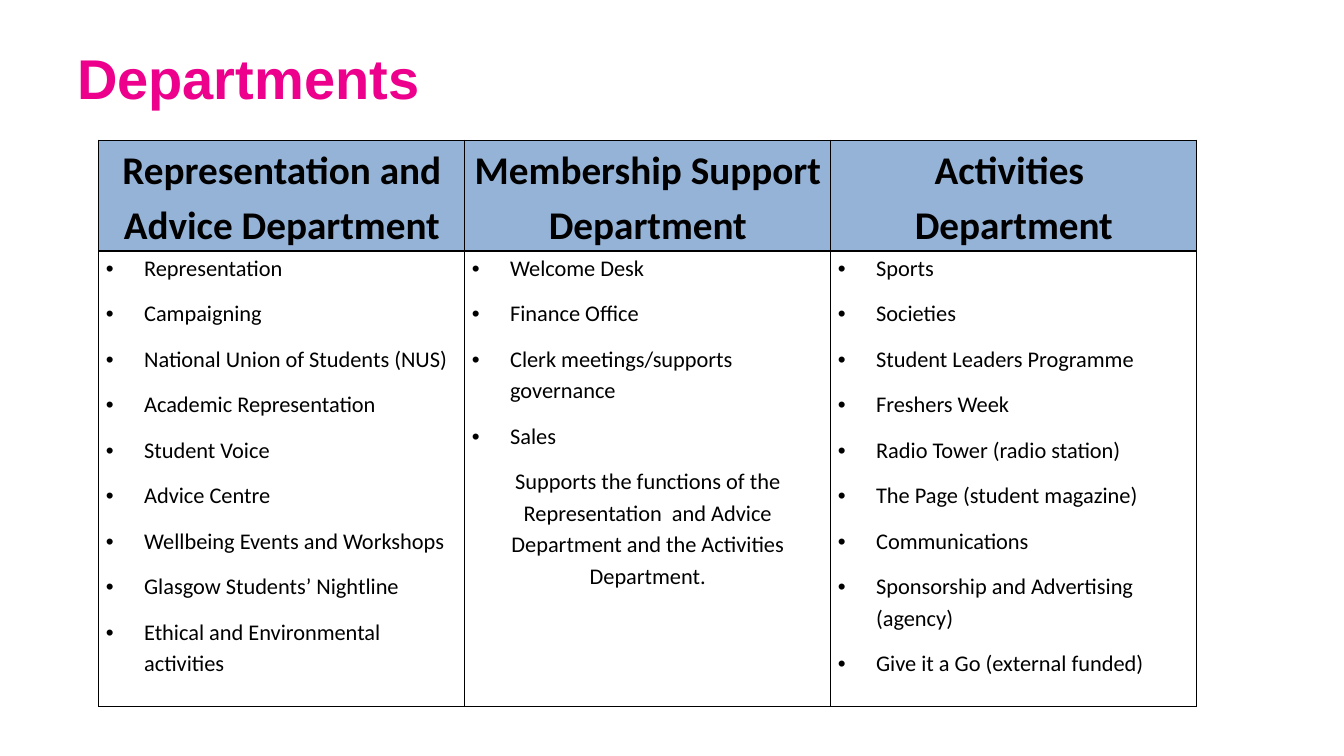
import pptx
import pptx.dml.color
import pptx.enum.text
import pptx.oxml.ns
import pptx.util
from lxml import etree

Inches = pptx.util.Inches
Pt = pptx.util.Pt
RGB = pptx.dml.color.RGBColor
ALIGN = pptx.enum.text.PP_ALIGN
ANCHOR = pptx.enum.text.MSO_ANCHOR

PINK = RGB(0xEC, 0x00, 0x8C)
BLUE = RGB(0x95, 0xB3, 0xD7)
BLACK = RGB(0x00, 0x00, 0x00)

WIDE, HIGH = Inches(13.33), Inches(7.5)
COL = Inches(3.63)
ROWS = (Inches(1.1), Inches(4.52))
INDENT = Inches(0.38)

# Department name, bulleted duties, closing note
DEPTS = (
    ("Representation and Advice Department",
     ("Representation", "Campaigning", "National Union of Students (NUS)",
      "Academic Representation", "Student Voice", "Advice Centre",
      "Wellbeing Events and Workshops", "Glasgow Students’ Nightline",
      "Ethical and Environmental activities"), None),
    ("Membership Support\nDepartment",
     ("Welcome Desk", "Finance Office", "Clerk meetings/supports governance",
      "Sales"),
     "Supports the functions of the Representation  and Advice Department "
     "and the Activities Department."),
    ("Activities \nDepartment",
     ("Sports", "Societies", "Student Leaders Programme", "Freshers Week",
      "Radio Tower (radio station)", "The Page (student magazine)",
      "Communications", "Sponsorship and Advertising (agency)",
      "Give it a Go (external funded)"), None),
)


def write(frame, text, size=16, font="Calibri", color=BLACK, bold=False,
          align=ALIGN.LEFT, bullet=False, line=1.15, after=10):
    """Fill the first empty paragraph, or add one."""
    para = frame.paragraphs[0] if not frame.text else frame.add_paragraph()
    if bullet:
        props = para._p.get_or_add_pPr()
        props.set("marL", str(INDENT))
        props.set("indent", str(-INDENT))
        etree.SubElement(props, pptx.oxml.ns.qn("a:buFont"), typeface="Arial")
        etree.SubElement(props, pptx.oxml.ns.qn("a:buChar"), char="•")
    para.text = text
    para.alignment = align
    para.line_spacing = line
    para.space_after = Pt(after)
    for run in para.runs:
        run.font.size = Pt(size)
        run.font.name = font
        run.font.bold = bold
        run.font.color.rgb = color


def border(cell):
    props = cell._tc.get_or_add_tcPr()
    for side in ("a:lnL", "a:lnR", "a:lnT", "a:lnB"):
        edge = etree.SubElement(props, pptx.oxml.ns.qn(side), w=str(Pt(1)))
        fill = etree.SubElement(edge, pptx.oxml.ns.qn("a:solidFill"))
        etree.SubElement(fill, pptx.oxml.ns.qn("a:srgbClr"), val=str(BLACK))


def style(cell, fill=None):
    cell.margin_left = cell.margin_right = Inches(0.07)
    cell.margin_top = cell.margin_bottom = 0
    border(cell)
    if fill is None:
        cell.fill.background()
    else:
        cell.fill.solid()
        cell.fill.fore_color.rgb = fill


def title(slide, text):
    box = slide.shapes.add_textbox(
        int(WIDE * 0.05), int(HIGH * 0.04), int(WIDE * 0.9), Inches(0.93))
    frame = box.text_frame
    frame.word_wrap = True
    frame.vertical_anchor = ANCHOR.MIDDLE
    write(frame, text, size=40, font="Arial", color=PINK, bold=True,
          line=1, after=0)


def grid(slide):
    table = slide.shapes.add_table(
        len(ROWS), len(DEPTS), Inches(0.98), Inches(1.39),
        COL * len(DEPTS), sum(ROWS)).table
    table.horz_banding = False
    for row, height in zip(table.rows, ROWS):
        row.height = height
    for num, (name, duties, note) in enumerate(DEPTS):
        table.columns[num].width = COL
        head, body = table.cell(0, num), table.cell(1, num)
        style(head, BLUE)
        style(body)
        write(head.text_frame, name, size=28, bold=True, align=ALIGN.CENTER)
        for duty in duties:
            write(body.text_frame, duty, bullet=True)
        if note:
            write(body.text_frame, note, align=ALIGN.CENTER)


def main():
    deck = pptx.Presentation()
    deck.slide_width, deck.slide_height = WIDE, HIGH
    slide = deck.slides.add_slide(deck.slide_layouts[6])
    title(slide, "Departments")
    grid(slide)
    deck.save("out.pptx")


if __name__ == "__main__":
    main()
